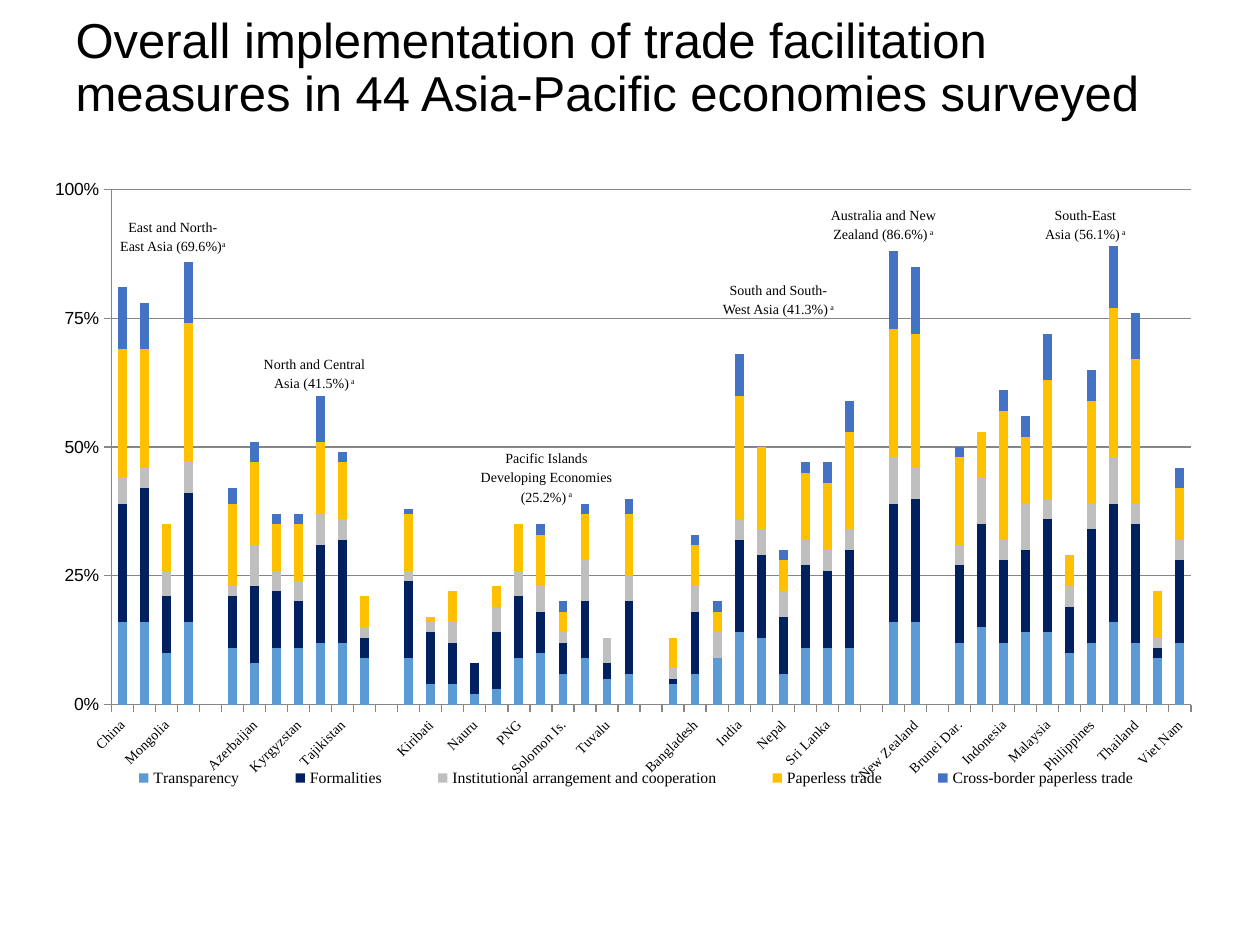
import lxml.etree
import pptx
import pptx.chart.data
import pptx.dml.color
import pptx.enum.chart
import pptx.enum.text
import pptx.oxml
import pptx.oxml.ns
import pptx.util

BLACK = pptx.dml.color.RGBColor(0x00, 0x00, 0x00)
GRAY = pptx.dml.color.RGBColor(0x86, 0x86, 0x86)
SKY = pptx.dml.color.RGBColor(0x5B, 0x9B, 0xD5)
NAVY = pptx.dml.color.RGBColor(0x00, 0x20, 0x60)
SILVER = pptx.dml.color.RGBColor(0xBF, 0xBF, 0xBF)
AMBER = pptx.dml.color.RGBColor(0xFF, 0xC0, 0x00)
BLUE = pptx.dml.color.RGBColor(0x44, 0x72, 0xC4)

REGIONS = [
    ["China", "Japan", "Mongolia", "Rep. of Korea"],
    ["Armenia", "Azerbaijan", "Kazakhstan", "Kyrgyzstan", "Russian Fed.",
     "Tajikistan", "Uzbekistan"],
    ["Fiji", "Kiribati", "Micronesia", "Nauru", "Palau", "PNG", "Samoa",
     "Solomon Is.", "Tonga", "Tuvalu", "Vanuatu"],
    ["Afghanistan", "Bangladesh", "Bhutan", "India", "Maldives", "Nepal",
     "Pakistan", "Sri Lanka", "Turkey"],
    ["Australia", "New Zealand"],
    ["Brunei Dar.", "Cambodia", "Indonesia", "Lao PDR", "Malaysia", "Myanmar",
     "Philippines", "Singapore", "Thailand", "Timor Leste", "Viet Nam"],
]

MEASURES = [
    ("Transparency", SKY, [
        [0.16, 0.16, 0.1, 0.16],
        [0.11, 0.08, 0.11, 0.11, 0.12, 0.12, 0.09],
        [0.09, 0.04, 0.04, 0.02, 0.03, 0.09, 0.1, 0.06, 0.09, 0.05, 0.06],
        [0.04, 0.06, 0.09, 0.14, 0.13, 0.06, 0.11, 0.11, 0.11],
        [0.16, 0.16],
        [0.12, 0.15, 0.12, 0.14, 0.14, 0.1, 0.12, 0.16, 0.12, 0.09, 0.12]]),
    ("Formalities", NAVY, [
        [0.23, 0.26, 0.11, 0.25],
        [0.1, 0.15, 0.11, 0.09, 0.19, 0.2, 0.04],
        [0.15, 0.1, 0.08, 0.06, 0.11, 0.12, 0.08, 0.06, 0.11, 0.03, 0.14],
        [0.01, 0.12, 0, 0.18, 0.16, 0.11, 0.16, 0.15, 0.19],
        [0.23, 0.24],
        [0.15, 0.2, 0.16, 0.16, 0.22, 0.09, 0.22, 0.23, 0.23, 0.02, 0.16]]),
    ("Institutional arrangement and cooperation", SILVER, [
        [0.05, 0.04, 0.05, 0.06],
        [0.02, 0.08, 0.04, 0.04, 0.06, 0.04, 0.02],
        [0.02, 0.02, 0.04, 0, 0.05, 0.05, 0.05, 0.02, 0.08, 0.05, 0.05],
        [0.02, 0.05, 0.05, 0.04, 0.05, 0.05, 0.05, 0.04, 0.04],
        [0.09, 0.06],
        [0.04, 0.09, 0.04, 0.09, 0.04, 0.04, 0.05, 0.09, 0.04, 0.02, 0.04]]),
    ("Paperless trade", AMBER, [
        [0.25, 0.23, 0.09, 0.27],
        [0.16, 0.16, 0.09, 0.11, 0.14, 0.11, 0.06],
        [0.11, 0.01, 0.06, 0, 0.04, 0.09, 0.1, 0.04, 0.09, 0, 0.12],
        [0.06, 0.08, 0.04, 0.24, 0.16, 0.06, 0.13, 0.13, 0.19],
        [0.25, 0.26],
        [0.17, 0.09, 0.25, 0.13, 0.23, 0.06, 0.2, 0.29, 0.28, 0.09, 0.1]]),
    ("Cross-border paperless trade", BLUE, [
        [0.12, 0.09, 0, 0.12],
        [0.03, 0.04, 0.02, 0.02, 0.09, 0.02, 0],
        [0.01, 0, 0, 0, 0, 0, 0.02, 0.02, 0.02, 0, 0.03],
        [0, 0.02, 0.02, 0.08, 0, 0.02, 0.02, 0.04, 0.06],
        [0.15, 0.13],
        [0.02, 0, 0.04, 0.04, 0.09, 0, 0.06, 0.12, 0.09, 0, 0.04]]),
]

AVERAGES = [
    (105, 210, 136, 47, ["East and North-", "East Asia (69.6%)"], "a"),
    (247, 347, 135, 47, ["North and Central Asia (41.5%)"], " a"),
    (460, 441, 173, 63, ["Pacific Islands Developing Economies (25.2%)"], " a"),
    (704, 273, 149, 47, ["South and South-West Asia (41.3%)"], " a"),
    (798, 198, 171, 59, ["Australia and New Zealand (86.6%)"], " a"),
    (1029, 198, 113, 47, ["South-East Asia (56.1%)"], " a"),
]


def px(length):
    """Turn a length in px into EMU."""
    return pptx.util.Emu(round(length * 914400 / 126))


def join_groups(groups, gap):
    """Chain the groups into one list with a gap between neighbours."""
    joined = list(groups[0])
    for group in groups[1:]:
        joined += [gap, *group]
    return joined


def place(parent, index, left, top, width, height, inner=False):
    """Give a chart part a manual layout in fractions of the chart."""
    for old in parent.findall(pptx.oxml.ns.qn("c:layout")):
        parent.remove(old)
    layout = pptx.oxml.parse_xml(f"<c:layout {pptx.oxml.ns.nsdecls('c')}/>")
    manual = lxml.etree.SubElement(layout, pptx.oxml.ns.qn("c:manualLayout"))
    settings = [("layoutTarget", "inner")] if inner else []
    settings += [("xMode", "edge"), ("yMode", "edge"),
                 ("x", left), ("y", top), ("w", width), ("h", height)]
    for name, value in settings:
        lxml.etree.SubElement(manual, pptx.oxml.ns.qn(f"c:{name}"), val=str(value))
    parent.insert(index, layout)


class SlideBuilder:
    """Hold the text style and the current slide."""

    sans = "Arial"
    serif = "Times New Roman"

    def __init__(self, page):
        self.page = page

    def style(self, font, name, size):
        font.name = name
        font.size = pptx.util.Pt(size)
        font.color.rgb = BLACK

    def title(self, left, top, width, height, text):
        box = self.page.shapes.title
        box.left, box.top, box.width, box.height = map(px, (left, top, width, height))
        frame = box.text_frame
        frame.text = text
        frame.auto_size = pptx.enum.text.MSO_AUTO_SIZE.NONE
        frame.vertical_anchor = pptx.enum.text.MSO_ANCHOR.MIDDLE
        para = frame.paragraphs[0]
        para.alignment = pptx.enum.text.PP_ALIGN.LEFT
        para.line_spacing = 0.9
        self.style(para.runs[0].font, self.sans, 28)

    def average(self, left, top, width, height, lines, mark):
        box = self.page.shapes.add_textbox(*map(px, (left, top, width, height)))
        frame = box.text_frame
        frame.word_wrap = True
        frame.text = "\n".join(lines)
        span = frame.paragraphs[-1].add_run()
        span.text = mark
        span.font._element.set("baseline", "30000")
        for para in frame.paragraphs:
            para.alignment = pptx.enum.text.PP_ALIGN.CENTER
            para.line_spacing = 1.15
            for span in para.runs:
                self.style(span.font, self.serif, 8)

    def stacked_chart(self, left, top, width, height):
        data = pptx.chart.data.CategoryChartData(number_format="0%")
        data.categories = join_groups(REGIONS, "")
        for name, color, groups in MEASURES:
            data.add_series(name, join_groups(groups, None))
        chart = self.page.shapes.add_chart(
            pptx.enum.chart.XL_CHART_TYPE.COLUMN_STACKED,
            *map(px, (left, top, width, height)), data).chart
        self.style(chart.font, self.sans, 10)
        chart.has_title = False
        plot = chart.plots[0]
        plot.gap_width, plot.overlap = 150, 100
        plot.vary_by_categories = False
        for series, (name, color, groups) in zip(plot.series, MEASURES):
            series.format.fill.solid()
            series.format.fill.fore_color.rgb = color
        place(chart._chartSpace.chart.plotArea, 0, 0.05, 0.016, 0.926, 0.778, inner=True)
        self.axes(chart)
        chart.has_legend = True
        legend = chart.legend
        legend.position = pptx.enum.chart.XL_LEGEND_POSITION.BOTTOM
        legend.include_in_layout = False
        self.style(legend.font, self.serif, 9)
        place(legend._element, 1, 0.03, 0.88, 0.94, 0.05)

    def axes(self, chart):
        countries, share = chart.category_axis, chart.value_axis
        share.minimum_scale, share.maximum_scale, share.major_unit = 0, 1, 0.25
        share.has_major_gridlines = True
        share.tick_labels.number_format = "0%"
        share.tick_labels.number_format_is_linked = False
        self.style(share.tick_labels.font, self.sans, 10)
        self.style(countries.tick_labels.font, self.serif, 8)
        body = countries._element.find(".//" + pptx.oxml.ns.qn("a:bodyPr"))
        body.set("rot", "-2700000")
        for axis in (countries, share):
            axis.major_tick_mark = pptx.enum.chart.XL_TICK_MARK.OUTSIDE
        for part in (countries, share, share.major_gridlines):
            part.format.line.color.rgb = GRAY
            part.format.line.width = pptx.util.Pt(0.75)


def main():
    deck = pptx.Presentation()
    deck.slide_width, deck.slide_height = px(1260), px(945)
    builder = SlideBuilder(deck.slides.add_slide(deck.slide_layouts[5]))
    builder.title(63, 21, 1134, 97, "Overall implementation of trade facilitation "
                  "measures in 44 Asia-Pacific economies surveyed")
    builder.stacked_chart(53, 179, 1166, 662)
    for average in AVERAGES:
        builder.average(*average)
    deck.save("out.pptx")


if __name__ == "__main__":
    main()
